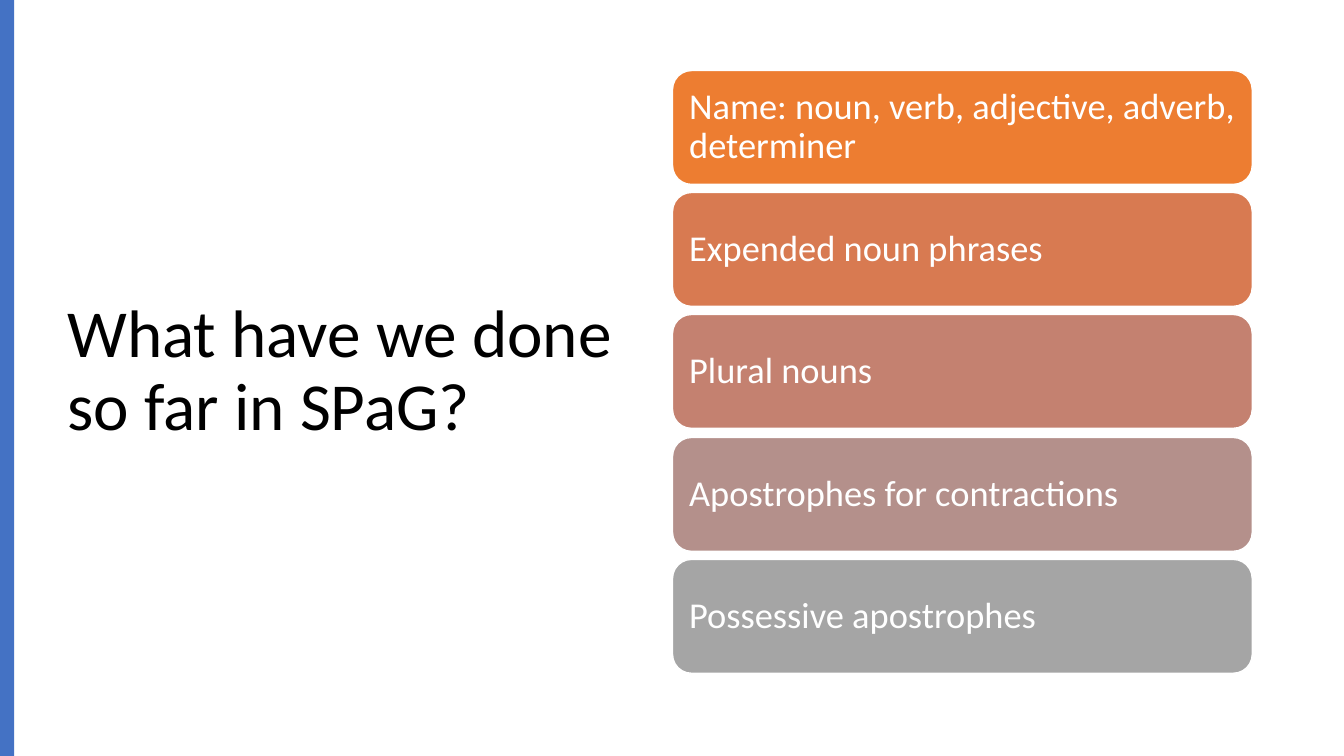
from dataclasses import dataclass

from pptx import Presentation
from pptx import util as u
from pptx.dml.color import RGBColor
from pptx.enum import shapes, text

EMU_PER_PX = 9144
FONT = "Calibri"
LINE_SPACING = 0.9

BLACK = RGBColor(0x00, 0x00, 0x00)
WHITE = RGBColor(0xFF, 0xFF, 0xFF)
BLUE = RGBColor(0x44, 0x72, 0xC4)
ORANGE = RGBColor(0xED, 0x7D, 0x31)
TERRACOTTA = RGBColor(0xD8, 0x7A, 0x51)
ROSE = RGBColor(0xC4, 0x81, 0x70)
MAUVE = RGBColor(0xB4, 0x90, 0x8B)
GREY = RGBColor(0xA5, 0xA5, 0xA5)

PAGE_WIDTH, PAGE_HEIGHT = 1333, 750
TOPIC_LEFT, TOPIC_WIDTH, TOPIC_HEIGHT = 667, 575, 113
FIRST_TOP, LAST_TOP = 70, 555
TOPIC_INSET = 11


@dataclass(frozen=True)
class Topic:
    label: str
    color: RGBColor


TOPICS = [
    Topic("Name: noun, verb, adjective, adverb, determiner", ORANGE),
    Topic("Expended noun phrases", TERRACOTTA),
    Topic("Plural nouns", ROSE),
    Topic("Apostrophes for contractions", MAUVE),
    Topic("Possessive apostrophes", GREY),
]


def px(length: int) -> u.Emu:
    return u.Emu(length * EMU_PER_PX)


def write(box, words: str, size: int, color: RGBColor) -> None:
    frame = box.text_frame
    frame.word_wrap = True
    frame.vertical_anchor = text.MSO_ANCHOR.MIDDLE
    para = frame.paragraphs[0]
    para.alignment = text.PP_ALIGN.LEFT
    para.line_spacing = LINE_SPACING
    span = para.add_run()
    span.text = words
    span.font.name = FONT
    span.font.size = u.Pt(size)
    span.font.color.rgb = color


def add_block(page, kind: shapes.MSO_SHAPE, left: int, top: int,
              width: int, height: int, color: RGBColor):
    box = page.shapes.add_shape(kind, px(left), px(top), px(width), px(height))
    box.shadow.inherit = False
    box.fill.solid()
    box.fill.fore_color.rgb = color
    box.line.fill.background()
    return box


def add_topic(page, topic: Topic, top: int) -> None:
    box = add_block(page, shapes.MSO_SHAPE.ROUNDED_RECTANGLE, TOPIC_LEFT, top,
                    TOPIC_WIDTH, TOPIC_HEIGHT, topic.color)
    box.line.color.rgb = WHITE
    box.line.width = u.Pt(1)
    frame = box.text_frame
    frame.margin_left = frame.margin_right = px(TOPIC_INSET)
    frame.margin_top = frame.margin_bottom = px(TOPIC_INSET)
    write(box, topic.label, 26, WHITE)


def main() -> None:
    deck = Presentation()
    deck.slide_width = px(PAGE_WIDTH)
    deck.slide_height = px(PAGE_HEIGHT)
    page = deck.slides.add_slide(deck.slide_layouts[6])

    title = page.shapes.add_textbox(px(57), px(68), px(567), px(602))
    write(title, "What have we done so far in SPaG?", 48, BLACK)
    add_block(page, shapes.MSO_SHAPE.RECTANGLE, 0, 0, 14, PAGE_HEIGHT, BLUE)

    pitch = (LAST_TOP - FIRST_TOP) / (len(TOPICS) - 1)
    for index, topic in enumerate(TOPICS):
        add_topic(page, topic, round(FIRST_TOP + index * pitch))

    deck.save("out.pptx")


if __name__ == "__main__":
    main()
